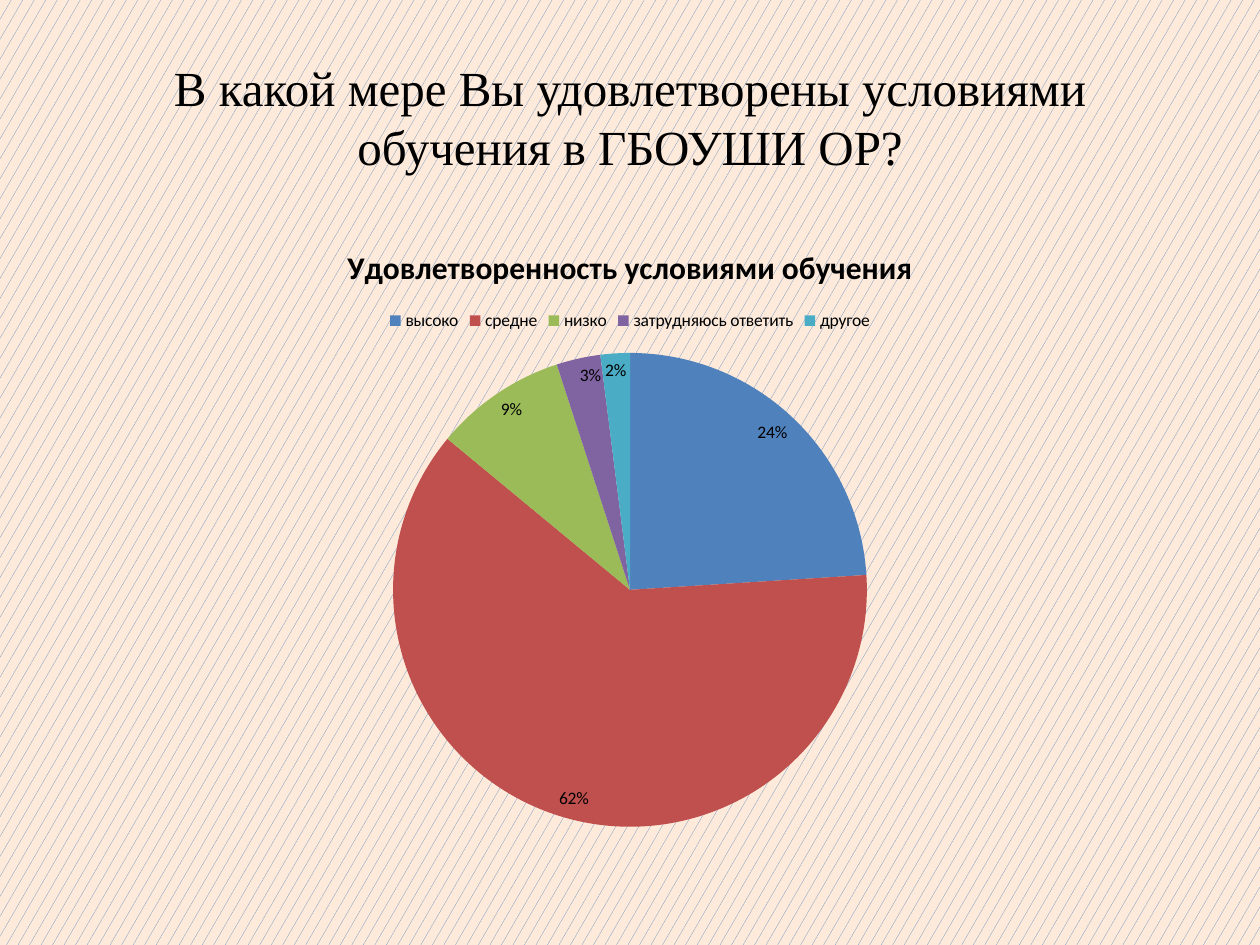
from pptx import Presentation
from pptx.chart.data import CategoryChartData
from pptx.dml.color import RGBColor
from pptx.enum.chart import XL_CHART_TYPE, XL_LABEL_POSITION, XL_LEGEND_POSITION
from pptx.enum.dml import MSO_PATTERN
from pptx.enum.text import MSO_ANCHOR, PP_ALIGN
from pptx.util import Inches, Pt

PIE = XL_CHART_TYPE.PIE
INSIDE_END = XL_LABEL_POSITION.INSIDE_END
LEGEND_TOP = XL_LEGEND_POSITION.TOP
CONFETTI = MSO_PATTERN.SMALL_CONFETTI
MIDDLE = MSO_ANCHOR.MIDDLE
CENTER = PP_ALIGN.CENTER

BLACK = RGBColor(0x00, 0x00, 0x00)
PEACH = RGBColor(0xFD, 0xEA, 0xDA)
BLUE = RGBColor(0x4F, 0x81, 0xBD)
RED = RGBColor(0xC0, 0x50, 0x4D)
GREEN = RGBColor(0x9B, 0xBB, 0x59)
PURPLE = RGBColor(0x80, 0x64, 0xA2)
TEAL = RGBColor(0x4B, 0xAC, 0xC6)

TITLE_ONLY = 5
ANSWERS = [
    ("высоко", 24, BLUE),
    ("средне", 62, RED),
    ("низко", 9, GREEN),
    ("затрудняюсь ответить", 3, PURPLE),
    ("другое", 2, TEAL),
]


def style_font(font, name, size, bold=False):
    font.name = name
    font.size = Pt(size)
    font.bold = bold
    font.color.rgb = BLACK


def set_background(page):
    fill = page.background.fill
    fill.patterned()
    fill.pattern = CONFETTI
    fill.fore_color.rgb = BLUE
    fill.back_color.rgb = PEACH


def write_title(page, text):
    box = page.shapes.title
    box.left, box.top = Inches(0.5), Inches(0.3)
    box.width, box.height = Inches(9), Inches(1.25)
    frame = box.text_frame
    frame.word_wrap = True
    frame.vertical_anchor = MIDDLE
    para = frame.paragraphs[0]
    para.alignment = CENTER
    span = para.add_run()
    span.text = text
    style_font(span.font, "Times New Roman", 28)


def add_answer_pie(page, title, answers):
    names, values, colors = zip(*answers)
    data = CategoryChartData()
    data.categories = names
    data.add_series("Series 1", values)
    chart = page.shapes.add_chart(
        PIE, Inches(0.5), Inches(1.75), Inches(9), Inches(4.95), data
    ).chart
    style_font(chart.font, "Calibri", 10)

    chart.has_title = True
    span = chart.chart_title.text_frame.paragraphs[0].add_run()
    span.text = title
    style_font(span.font, "Calibri", 18, bold=True)
    chart.chart_title.include_in_layout = False

    chart.has_legend = True
    chart.legend.position = LEGEND_TOP
    chart.legend.include_in_layout = False

    plot = chart.plots[0]
    plot.vary_by_categories = True
    for index, color in enumerate(colors):
        fill = plot.series[0].points[index].format.fill
        fill.solid()
        fill.fore_color.rgb = color

    plot.has_data_labels = True
    labels = plot.data_labels
    labels.show_percentage = True
    labels.show_value = False
    labels.number_format = "0%"
    labels.number_format_is_linked = False
    labels.position = INSIDE_END
    style_font(labels.font, "Calibri", 10)


def main():
    deck = Presentation()
    deck.slide_width, deck.slide_height = Inches(10), Inches(7.5)
    page = deck.slides.add_slide(deck.slide_layouts[TITLE_ONLY])
    set_background(page)
    write_title(page, "В какой мере Вы удовлетворены условиями обучения в ГБОУШИ ОР?")
    add_answer_pie(page, "Удовлетворенность условиями обучения", ANSWERS)
    deck.save("out.pptx")


if __name__ == "__main__":
    main()
